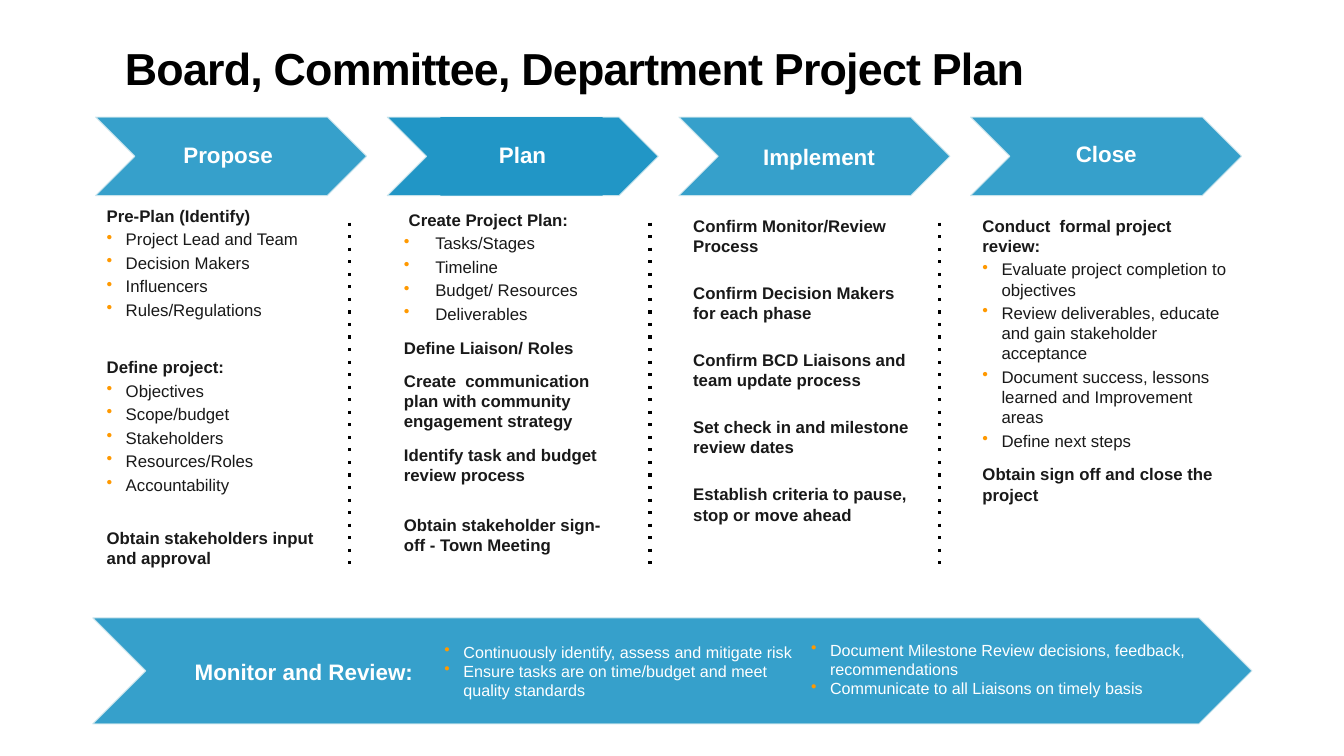
from lxml.etree import SubElement
from pptx import Presentation
from pptx.dml.color import RGBColor
from pptx.enum.shapes import MSO_CONNECTOR, MSO_SHAPE
from pptx.enum.text import MSO_ANCHOR, PP_ALIGN
from pptx.oxml.ns import qn
from pptx.util import Cm, Pt

THEME = {
    "font": "Arial",
    "blue": "2196C6",
    "outline": "CFE7EE",
    "bullet": "FF9900",
    "ink": "191919",
    "black": "000000",
    "white": "FFFFFF",
    "title": 32,
    "heading": 16,
    "body": 12,
    "notes": 11.5,
    "opacity": 90000,
}

TITLE = "Board, Committee, Department Project Plan"
STAGES = [
    {"name": "Propose", "label_offset": 1.27, "label_top": 2.95, "opaque": False},
    {"name": "Plan", "label_offset": 1.34, "label_top": 2.95, "opaque": True},
    {"name": "Implement", "label_offset": 1.46, "label_top": 2.99, "opaque": False},
    {"name": "Close", "label_offset": 1.35, "label_top": 2.93, "opaque": False},
]

TIGHT, NORMAL, SMALL, MEDIUM, LARGE = 0, 2.4, 9.6, 19.2, 21.2
COLUMNS = [
    {"box": (2.39, 5.03, 6.83, 11.46), "indent": 0.48, "lines": [
        ("head", "Pre-Plan (Identify)", TIGHT),
        ("item", "Project Lead and Team", NORMAL),
        ("item", "Decision Makers", NORMAL),
        ("item", "Influencers", NORMAL),
        ("item", "Rules/Regulations", NORMAL),
        ("head", "Define project:", 26.4),
        ("item", "Objectives", NORMAL),
        ("item", "Scope/budget", NORMAL),
        ("item", "Stakeholders", NORMAL),
        ("item", "Resources/Roles", NORMAL),
        ("item", "Accountability", NORMAL),
        ("head", "Obtain stakeholders input", 23.6),
        ("head", "and approval", TIGHT),
    ]},
    {"box": (9.88, 5.13, 5.92, 10.87), "indent": 0.79, "lines": [
        ("inset", "Create Project Plan:", TIGHT),
        ("item", "Tasks/Stages", NORMAL),
        ("item", "Timeline", NORMAL),
        ("item", "Budget/ Resources", NORMAL),
        ("item", "Deliverables", NORMAL),
        ("head", "Define Liaison/ Roles", SMALL),
        ("head", "Create  communication plan with community engagement strategy", SMALL),
        ("head", "Identify task and budget review process", SMALL),
        ("head", "Obtain stakeholder sign-off - Town Meeting", LARGE),
    ]},
    {"box": (17.17, 5.28, 6.15, 10.41), "indent": 0.48, "lines": [
        ("head", "Confirm Monitor/Review Process", TIGHT),
        ("head", "Confirm Decision Makers for each phase", MEDIUM),
        ("head", "Confirm BCD Liaisons and team update process", MEDIUM),
        ("head", "Set check in and milestone review dates", MEDIUM),
        ("head", "Establish criteria to pause, stop or move ahead", MEDIUM),
    ]},
    {"box": (24.46, 5.28, 6.83, 8.05), "indent": 0.48, "lines": [
        ("head", "Conduct  formal project review:", TIGHT),
        ("item", "Evaluate project completion to objectives", NORMAL),
        ("item", "Review deliverables, educate and gain stakeholder acceptance", NORMAL),
        ("item", "Document success, lessons learned and Improvement areas", NORMAL),
        ("item", "Define next steps", NORMAL),
        ("head", "Obtain sign off and close the project", SMALL),
    ]},
]

MONITOR = "Monitor and Review:"
MONITOR_NOTES = [
    {"box": (10.9, 16.03, 9.88, 2.59), "indent": 0.48, "lines": [
        ("item", "Continuously identify, assess and mitigate risk", TIGHT),
        ("item", "Ensure tasks are on time/budget and meet quality standards", TIGHT),
    ]},
    {"box": (20.14, 15.98, 11.33, 2.41), "indent": 0.48, "lines": [
        ("item", "Document Milestone Review decisions, feedback, recommendations", TIGHT),
        ("item", "Communicate to all Liaisons on timely basis", TIGHT),
    ]},
]

STAGE_LEFT, STAGE_TOP, STAGE_STEP = 2.41, 2.95, 7.35
STAGE_WIDTH, STAGE_HEIGHT, LABEL_WIDTH = 6.83, 1.98, 4.09
DIVIDERS, DIVIDER_TOP, DIVIDER_BOTTOM = (8.81, 16.38, 23.67), 5.61, 14.22
LABEL_INSETS = (0.05, 0.03, 0, 0.03)
BODY_INSETS = (0.3, 0.15, 0.3, 0.15)


def color(name):
    return RGBColor.from_string(THEME[name])


def apply(target, values):
    for name, value in values.items():
        setattr(target, name, value)


def set_opacity(color_format_parent):
    for tint in color_format_parent.iter(qn("a:srgbClr")):
        SubElement(tint, qn("a:alpha"), val=str(THEME["opacity"]))


def add_chevron(slide, box, opaque=False):
    shape = slide.shapes.add_shape(MSO_SHAPE.CHEVRON, *map(Cm, box))
    shape.shadow.inherit = False
    shape.fill.solid()
    shape.fill.fore_color.rgb = color("blue")
    if not opaque:
        set_opacity(shape.element.spPr)
    shape.line.color.rgb = color("outline")
    shape.line.width = Pt(0.75)
    set_opacity(shape.element.spPr.find(qn("a:ln")))


def prepare_frame(shape, insets, anchor):
    frame = shape.text_frame
    left, top, right, bottom = map(Cm, insets)
    apply(frame, {
        "word_wrap": True, "vertical_anchor": anchor,
        "margin_left": left, "margin_top": top,
        "margin_right": right, "margin_bottom": bottom,
    })
    return frame


def add_run(paragraph, text, size, ink, bold):
    run = paragraph.add_run()
    run.text = text
    apply(run.font, {"name": THEME["font"], "size": Pt(THEME[size]), "bold": bold})
    run.font.color.rgb = color(ink)
    return run


def add_label(slide, box, text, size="heading", ink="white", filled=False):
    if filled:
        shape = slide.shapes.add_shape(MSO_SHAPE.RECTANGLE, *map(Cm, box))
        shape.shadow.inherit = False
        shape.fill.solid()
        shape.fill.fore_color.rgb = color("blue")
        shape.line.fill.background()
    else:
        shape = slide.shapes.add_textbox(*map(Cm, box))
    paragraph = prepare_frame(shape, LABEL_INSETS, MSO_ANCHOR.MIDDLE).paragraphs[0]
    apply(paragraph, {"alignment": PP_ALIGN.CENTER, "line_spacing": 0.9})
    return add_run(paragraph, text, size, ink, True)


def set_indent(paragraph, left, hanging=0):
    properties = paragraph._p.get_or_add_pPr()
    properties.set("marL", str(Cm(left)))
    properties.set("indent", str(-Cm(hanging)))
    return properties


def add_list(slide, content, size, ink):
    shape = slide.shapes.add_textbox(*map(Cm, content["box"]))
    frame = prepare_frame(shape, BODY_INSETS, MSO_ANCHOR.TOP)
    for index, (kind, text, gap) in enumerate(content["lines"]):
        paragraph = frame.add_paragraph() if index else frame.paragraphs[0]
        apply(paragraph, {"alignment": PP_ALIGN.LEFT, "space_before": Pt(gap)})
        if kind == "inset":
            set_indent(paragraph, 0.12)
        if kind == "item":
            properties = set_indent(paragraph, content["indent"], content["indent"])
            bullet_color = SubElement(properties, qn("a:buClr"))
            SubElement(bullet_color, qn("a:srgbClr"), val=THEME["bullet"])
            SubElement(properties, qn("a:buChar"), char="•")
        add_run(paragraph, text, size, ink, kind != "item")


def add_divider(slide, left):
    connector = slide.shapes.add_connector(
        MSO_CONNECTOR.STRAIGHT, *map(Cm, (left, DIVIDER_TOP, left, DIVIDER_BOTTOM)))
    connector.line.color.rgb = color("black")
    connector.line.width = Pt(2.25)
    properties = connector.element.spPr
    SubElement(properties.find(qn("a:ln")), qn("a:prstDash"), val="dot")
    SubElement(properties, qn("a:effectLst"))


def main():
    presentation = Presentation()
    apply(presentation, {"slide_width": Cm(33.87), "slide_height": Cm(19.05)})
    slide = presentation.slides.add_slide(presentation.slide_layouts[6])
    title = add_label(slide, (0, 0.43, 28.9, 2.72), TITLE, "title", "black")
    title.font._element.set("spc", "-60")
    for index, stage in enumerate(STAGES):
        left = STAGE_LEFT + index * STAGE_STEP
        add_chevron(slide, (left, STAGE_TOP, STAGE_WIDTH, STAGE_HEIGHT), stage["opaque"])
        label_box = (left + stage["label_offset"], stage["label_top"], LABEL_WIDTH, STAGE_HEIGHT)
        add_label(slide, label_box, stage["name"], filled=stage["opaque"])
    add_chevron(slide, (2.34, 15.57, 29.21, 2.67))
    add_label(slide, (4.04, 14.81, 7.19, 4.29), MONITOR)
    for column in COLUMNS:
        add_list(slide, column, "body", "ink")
    for notes in MONITOR_NOTES:
        add_list(slide, notes, "notes", "white")
    for left in DIVIDERS:
        add_divider(slide, left)
    presentation.save("out.pptx")


if __name__ == "__main__":
    main()
